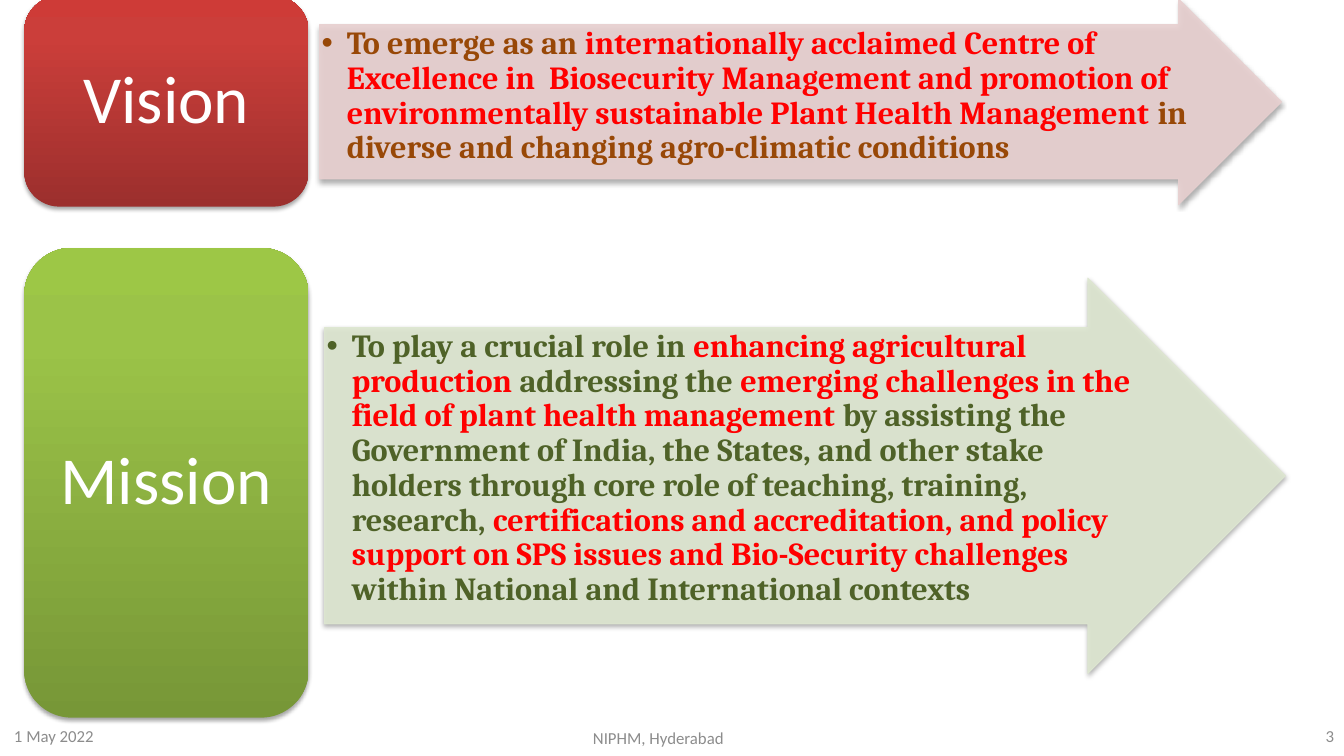
from lxml.etree import SubElement
from copy import deepcopy
from pptx import Presentation
from pptx.dml.color import RGBColor
from pptx.enum.shapes import MSO_SHAPE
from pptx.enum.text import MSO_ANCHOR, PP_ALIGN
from pptx.oxml.ns import qn
from pptx.util import Inches, Pt

RED = "FF0000"
BROWN = "984807"
OLIVE = "4F6228"
GREY = "8C8C8C"

VISION = [
    ("To emerge as an ", BROWN),
    ("internationally acclaimed Centre of Excellence in  Biosecurity Management and "
     "promotion of environmentally sustainable Plant Health Management", RED),
    (" in diverse and changing agro-climatic conditions", BROWN),
]
MISSION = [
    ("To play a crucial role in ", OLIVE),
    ("enhancing agricultural production ", RED),
    ("addressing the ", OLIVE),
    ("emerging challenges in the field of plant health management ", RED),
    ("by assisting the Government of India, the States, and other stake holders "
     "through core role of teaching, training, research, ", OLIVE),
    ("certifications and accreditation, and policy support on SPS issues and "
     "Bio-Security challenges ", RED),
    ("within National and International contexts", OLIVE),
]


def colour(value):
    return RGBColor.from_string(value)


def add_span(para, text, font, size, value, bold=False):
    span = para.add_run()
    span.text = text
    span.font.name = font
    span.font.size = Pt(size)
    span.font.bold = bold
    span.font.color.rgb = colour(value)


def set_margins(frame, across, down):
    frame.margin_left = frame.margin_right = Inches(across)
    frame.margin_top = frame.margin_bottom = Inches(down)


def set_alpha(fill_element, percent):
    SubElement(fill_element[0], qn("a:alpha"), val=str(percent * 1000))


def add_shadow(shape):
    shape.shadow.inherit = False
    effects = shape._element.spPr.find(qn("a:effectLst"))
    shadow = SubElement(effects, qn("a:outerShdw"), blurRad=str(Pt(3.1)), dist=str(Pt(1.8)),
                        dir="5400000", rotWithShape="0")
    black = SubElement(shadow, qn("a:srgbClr"), val="000000")
    SubElement(black, qn("a:alpha"), val="35000")


def fill_gradient(shape, stops):
    shape.fill.gradient()
    shape.fill.gradient_angle = 90
    stop_list = shape._element.spPr.find(qn("a:gradFill")).find(qn("a:gsLst"))
    stop_list.insert(1, deepcopy(stop_list[0]))
    for stop, (position, value) in zip(shape.fill.gradient_stops, stops):
        stop.position = position
        stop.color.rgb = colour(value)


def add_label(page, box, text, stops):
    label = page.shapes.add_shape(MSO_SHAPE.ROUNDED_RECTANGLE, *map(Inches, box))
    fill_gradient(label, stops)
    label.line.fill.background()
    add_shadow(label)
    frame = label.text_frame
    frame.word_wrap = True
    frame.vertical_anchor = MSO_ANCHOR.MIDDLE
    set_margins(frame, 0.2, 0.1)
    para = frame.paragraphs[0]
    para.alignment = PP_ALIGN.CENTER
    para.line_spacing = 0.9
    add_span(para, text, "Calibri", 48, "FFFFFF")


def add_statement(page, box, value, spans):
    arrow = page.shapes.add_shape(MSO_SHAPE.RIGHT_ARROW, *map(Inches, box))
    arrow.adjustments[0] = 0.75
    arrow.adjustments[1] = 0.5
    arrow.fill.solid()
    arrow.fill.fore_color.rgb = colour(value)
    arrow.line.color.rgb = colour(value)
    arrow.line.width = Pt(0.75)
    for fill_element in arrow._element.spPr.iter(qn("a:solidFill")):
        set_alpha(fill_element, 90)
    add_shadow(arrow)
    frame = arrow.text_frame
    frame.word_wrap = True
    frame.vertical_anchor = MSO_ANCHOR.TOP
    set_margins(frame, 0.02, 0.02)
    para = frame.paragraphs[0]
    properties = para._p.get_or_add_pPr()
    properties.set("marL", str(Inches(0.25)))
    properties.set("indent", str(Inches(-0.25)))
    SubElement(properties, qn("a:buFont"), typeface="Arial")
    SubElement(properties, qn("a:buChar"), char="•")
    para.alignment = PP_ALIGN.LEFT
    para.line_spacing = 0.9
    for text, span_colour in spans:
        add_span(para, text, "Cambria", 23, span_colour, bold=True)


def add_footer(page, box, text, alignment):
    footer = page.shapes.add_textbox(*map(Inches, box))
    frame = footer.text_frame
    frame.word_wrap = True
    frame.vertical_anchor = MSO_ANCHOR.MIDDLE
    para = frame.paragraphs[0]
    para.alignment = alignment
    add_span(para, text, "Calibri", 12, GREY)


def main():
    deck = Presentation()
    deck.slide_width = Inches(13.33)
    deck.slide_height = Inches(7.5)
    page = deck.slides.add_slide(deck.slide_layouts[6])

    add_footer(page, (0.04, 7.1, 3.11, 0.4), "1 May 2022", PP_ALIGN.LEFT)
    add_footer(page, (4.42, 7.12, 4.22, 0.4), "NIPHM, Hyderabad", PP_ALIGN.CENTER)
    add_footer(page, (10.22, 7.1, 3.11, 0.4), "3", PP_ALIGN.RIGHT)

    add_statement(page, (3.17, -0.01, 9.54, 2.04), "E8D0D0", VISION)
    add_label(page, (0.24, -0.04, 2.82, 2.09), "Vision",
              [(0, "9C2F2D"), (0.8, "CB3E3A"), (1, "CE3B37")])
    add_statement(page, (3.22, 2.76, 9.53, 3.92), "DEE7D1", MISSION)
    add_label(page, (0.24, 2.46, 2.82, 4.66), "Mission",
              [(0, "779737"), (0.8, "9BC348"), (1, "9DC746")])

    deck.save("out.pptx")


if __name__ == "__main__":
    main()
